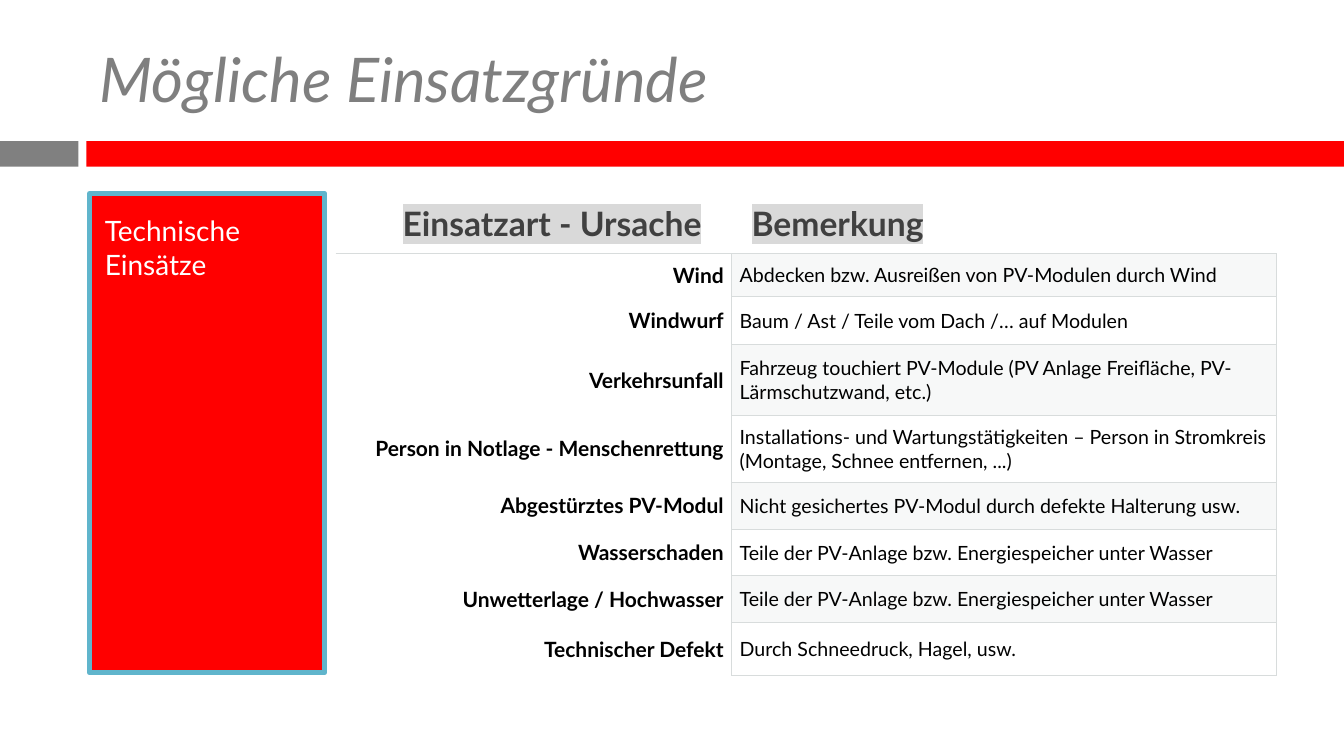
from dataclasses import dataclass

from lxml import etree
from pptx import Presentation
from pptx.dml.color import RGBColor
from pptx.enum.shapes import MSO_SHAPE
from pptx.enum.text import MSO_ANCHOR, MSO_AUTO_SIZE, PP_ALIGN
from pptx.oxml.ns import qn
from pptx.util import Cm, Pt

RECT = MSO_SHAPE.RECTANGLE
TOP, MIDDLE = MSO_ANCHOR.TOP, MSO_ANCHOR.MIDDLE
LEFT, RIGHT, JUSTIFY = PP_ALIGN.LEFT, PP_ALIGN.RIGHT, PP_ALIGN.JUSTIFY
NO_FIT = MSO_AUTO_SIZE.NONE


@dataclass(frozen=True)
class Theme:
    font: str = "Lato"
    red: str = "FF0000"
    gray: str = "808080"
    title: str = "7F7F7F"
    blue: str = "60B5CC"
    white: str = "FFFFFF"
    black: str = "000000"
    head: str = "404040"
    mark: str = "D9D9D9"
    rule: str = "D8DCDC"
    band: str = "D8DEDC"
    title_size: int = 44
    head_size: int = 24
    panel_size: int = 20
    cause_size: int = 15
    note_size: int = 14


THEME = Theme()
HEADS = ("Einsatzart - Ursache", "Bemerkung")
# cause, remark, row height in cm
ROWS = (
    ("Wind", "Abdecken bzw. Ausreißen von PV-Modulen durch Wind", 1.07),
    ("Windwurf", "Baum / Ast / Teile vom Dach /… auf Modulen", 1.22),
    ("Verkehrsunfall",
     "Fahrzeug touchiert PV-Module (PV Anlage Freifläche, PV-Lärmschutzwand, etc.)", 1.78),
    ("Person in Notlage - Menschenrettung",
     "Installations- und Wartungstätigkeiten – Person in Stromkreis "
     "(Montage, Schnee entfernen, ...)", 1.68),
    ("Abgestürztes PV-Modul",
     "Nicht gesichertes PV-Modul durch defekte Halterung usw.", 1.19),
    ("Wasserschaden", "Teile der PV-Anlage bzw. Energiespeicher unter Wasser", 1.17),
    ("Unwetterlage / Hochwasser",
     "Teile der PV-Anlage bzw. Energiespeicher unter Wasser", 1.19),
    ("Technischer Defekt", "Durch Schneedruck, Hagel, usw.", 1.32),
)


def color(code):
    return RGBColor.from_string(code)


def place(shape, box):
    shape.left, shape.top, shape.width, shape.height = (Cm(n) for n in box)


def style(para, size, code, bold=False, italic=False):
    font = para.font
    font.name, font.size = THEME.font, Pt(size)
    font.bold, font.italic = bold, italic
    font.color.rgb = color(code)


def inset(part, left, top, right, low):
    """Set the margins, in cm, of a cell or a text frame."""
    part.margin_left, part.margin_top = Cm(left), Cm(top)
    part.margin_right, part.margin_bottom = Cm(right), Cm(low)


def draw_bands(slide, box):
    """Split the box into a short gray and a long red band."""
    left, top, width, height = box
    short, gap = 1.98, 0.2
    start = short + gap
    for x, wide, code in ((left, short, THEME.gray),
                          (left + start, width - start, THEME.red)):
        band = slide.shapes.add_shape(RECT, Cm(x), Cm(top), Cm(wide), Cm(height))
        band.shadow.inherit = False
        band.fill.solid()
        band.fill.fore_color.rgb = color(code)
        band.line.fill.background()


def draw_title(slide, box):
    title = slide.shapes.title
    place(title, box)
    frame = title.text_frame
    frame.text = "Mögliche Einsatzgründe"
    frame.vertical_anchor = MIDDLE
    frame.auto_size = NO_FIT
    para = frame.paragraphs[0]
    para.alignment = LEFT
    style(para, THEME.title_size, THEME.title, italic=True)


def draw_panel(slide, box):
    panel = slide.placeholders[1]
    place(panel, box)
    panel.fill.solid()
    panel.fill.fore_color.rgb = color(THEME.red)
    panel.line.color.rgb = color(THEME.blue)
    panel.line.width = Pt(4)
    frame = panel.text_frame
    frame.text = "Technische Einsätze"
    frame.auto_size = NO_FIT
    frame.vertical_anchor = TOP
    inset(frame, 0.38, 0.5, 0.38, 0.25)
    para = frame.paragraphs[0]
    props = para._p.get_or_add_pPr()
    props.set("marL", "0")
    props.set("indent", "0")
    etree.SubElement(props, qn("a:buNone"))
    para.space_before, para.space_after = Pt(0), Pt(10)
    style(para, THEME.panel_size, THEME.white)


def edge(cell, sides):
    """Rule the named sides (L, R, T, B) and clear the others."""
    props = cell._tc.get_or_add_tcPr()
    for side in "LRTB":
        line = etree.SubElement(props, qn("a:ln" + side), w=str(Pt(0.75)))
        if side in sides:
            fill = etree.SubElement(line, qn("a:solidFill"))
            etree.SubElement(fill, qn("a:srgbClr"), val=THEME.rule)
        else:
            etree.SubElement(line, qn("a:noFill"))


def tint(cell, code):
    """Fill the cell at 20 % opacity."""
    cell.fill.solid()
    cell.fill.fore_color.rgb = color(code)
    fill = cell._tc.tcPr.find(qn("a:solidFill"))
    etree.SubElement(fill[0], qn("a:alpha"), val="20000")


def write(cell, text, align, size, code, bold):
    cell.text = text
    para = cell.text_frame.paragraphs[0]
    para.alignment, para.space_after = align, Pt(6)
    style(para, size, code, bold)
    return para


def fill_head(cell, text, align, right):
    para = write(cell, text, align, THEME.head_size, THEME.head, True)
    mark = etree.SubElement(para.runs[0]._r.get_or_add_rPr(), qn("a:highlight"))
    etree.SubElement(mark, qn("a:srgbClr"), val=THEME.mark)
    cell.vertical_anchor = TOP
    inset(cell, 0.5, 0.25, right, 0.25)
    edge(cell, "B")
    cell.fill.background()


def fill_row(cells, cause, note, first, shade):
    left, right = cells
    write(left, cause, RIGHT, THEME.cause_size, THEME.black, True)
    write(right, note, LEFT, THEME.note_size, THEME.black, False)
    for cell in cells:
        cell.vertical_anchor = MIDDLE
        inset(cell, 0.2, 0.18, 0.2, 0.18)
    edge(left, "TR" if first else "R")
    edge(right, "LRTB")
    left.fill.background()
    tint(right, THEME.band if shade else THEME.white)


def draw_table(slide, box):
    left, top, width, height = (Cm(n) for n in box)
    table = slide.shapes.add_table(len(ROWS) + 1, 2, left, top, width, height).table
    table.first_row = table.horz_banding = False
    table.columns[0].width = Cm(9.98)
    table.columns[1].width = width - Cm(9.98)
    table.rows[0].height = Cm(1.25)
    fill_head(table.cell(0, 0), HEADS[0], RIGHT, 0.76)
    fill_head(table.cell(0, 1), HEADS[1], JUSTIFY, 0.28)
    for i, (cause, note, tall) in enumerate(ROWS, 1):
        table.rows[i].height = Cm(tall)
        fill_row((table.cell(i, 0), table.cell(i, 1)), cause, note, i == 1, i % 2)


def main():
    deck = Presentation()
    deck.slide_width, deck.slide_height = Cm(33.87), Cm(19.05)
    slide = deck.slides.add_slide(deck.slide_layouts[1])
    draw_bands(slide, (0, 3.56, 33.87, 0.64))
    draw_title(slide, (2.26, 0.76, 29.92, 2.41))
    draw_panel(slide, (2.26, 4.88, 5.92, 12.07))
    draw_table(slide, (8.46, 4.88, 23.7, 11.87))
    deck.save("out.pptx")


if __name__ == "__main__":
    main()
